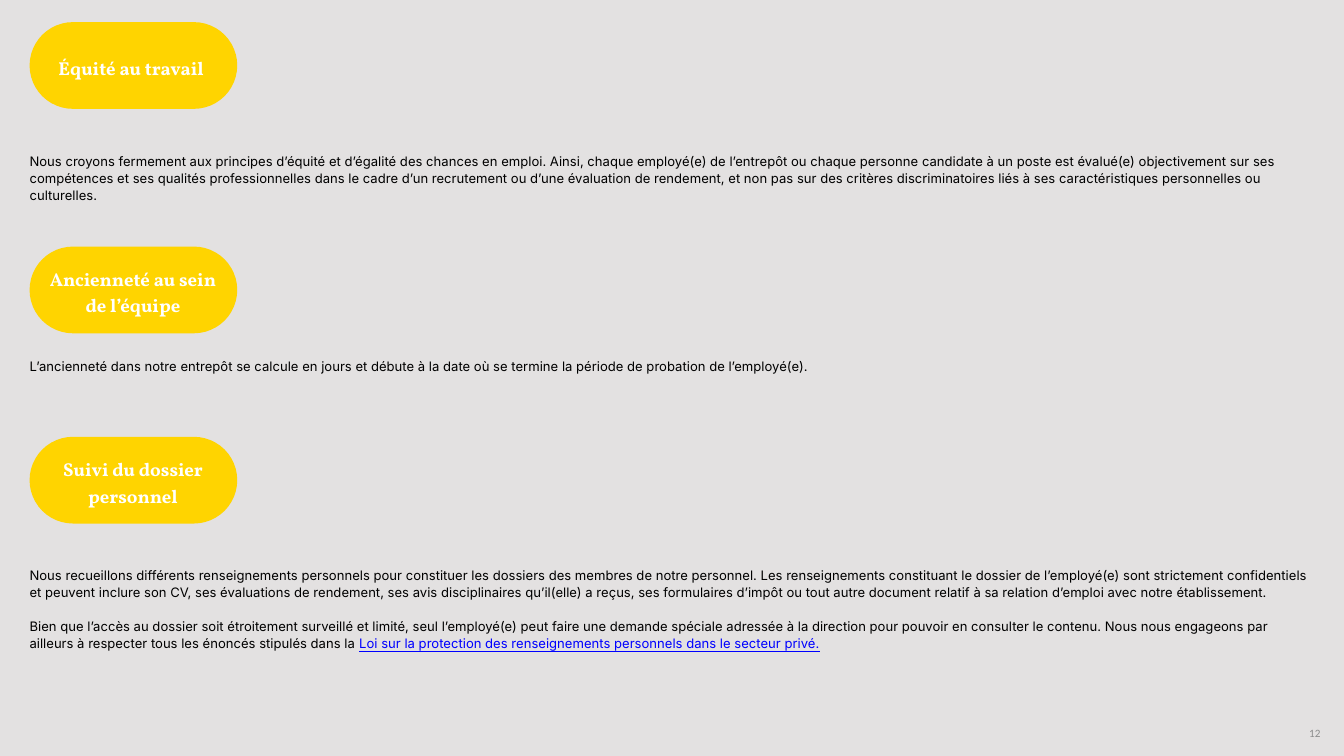
import pptx
import pptx.util
import pptx.dml.color
import pptx.enum.shapes
import pptx.enum.text

Pt = pptx.util.Pt
RGBColor = pptx.dml.color.RGBColor
Align = pptx.enum.text.PP_ALIGN
Anchor = pptx.enum.text.MSO_ANCHOR

BACKGROUND = RGBColor(0xE3, 0xE1, 0xE1)
YELLOW = RGBColor(0xFF, 0xD4, 0x00)
WHITE = RGBColor(0xFF, 0xFF, 0xFF)
BLACK = RGBColor(0x00, 0x00, 0x00)
BLUE = RGBColor(0x00, 0x00, 0xFF)
GREY = RGBColor(0x8C, 0x8C, 0x8C)

WIDTH = pptx.util.Inches(20)
HEIGHT = pptx.util.Inches(11.25)
COLUMN = WIDTH / 100
ROW = HEIGHT / 100

MARGIN = 2.2
BODY_COLUMNS = 95.65
PILL_COLUMNS, PILL_ROWS = 15.45, 11.47
BODY_LEADING = 18.2
TITLE_LEADING = 28

LAW = "Loi sur la protection des renseignements personnels dans le secteur privé."

SECTIONS = [
    (2.93, 17.16, 6.67, "Équité au travail", (2.15, 4.09, 11.2, 3.2), Align.LEFT, [
        ["Nous croyons fermement aux principes d’équité et d’égalité des chances en emploi. "
         "Ainsi, chaque employé(e) de l’entrepôt ou chaque personne candidate à un poste est "
         "évalué(e) objectivement sur ses compétences et ses qualités professionnelles dans le "
         "cadre d’un recrutement ou d’une évaluation de rendement, et non pas sur des critères "
         "discriminatoires liés à ses caractéristiques personnelles ou culturelles."],
    ]),
    (32.62, 14.58, 2.13, "Ancienneté au sein de l’équipe", (1.2, 2.35, 13, 6.67), Align.CENTER, [
        ["L’ancienneté dans notre entrepôt se calcule en jours et débute à la date où se "
         "termine la période de probation de l’employé(e)."],
    ]),
    (57.78, 17.16, 11.11, "Suivi du dossier personnel", (1.2, 2.35, 13, 6.67), Align.CENTER, [
        ["Nous recueillons différents renseignements personnels pour constituer les dossiers "
         "des membres de notre personnel. Les renseignements constituant le dossier de "
         "l’employé(e) sont strictement confidentiels et peuvent inclure son CV, ses "
         "évaluations de rendement, ses avis disciplinaires qu’il(elle) a reçus, ses "
         "formulaires d’impôt ou tout autre document relatif à sa relation d’emploi avec "
         "notre établissement."],
        ["Bien que l’accès au dossier soit étroitement surveillé et limité, seul l’employé(e) "
         "peut faire une demande spéciale adressée à la direction pour pouvoir en consulter le "
         "contenu. Nous nous engageons par ailleurs à respecter tous les énoncés stipulés dans la ",
         LAW],
    ]),
]


def place(left, top, columns, rows):
    return (round(left * COLUMN), round(top * ROW),
            round(columns * COLUMN), round(rows * ROW))


def set_font(font, name, size, color, bold=False):
    font.name = name
    font.size = Pt(size)
    font.bold = bold
    font.color.rgb = color


def add_text_frame(page, box):
    frame = page.shapes.add_textbox(*place(*box)).text_frame
    frame.word_wrap = True
    frame.margin_left = frame.margin_top = frame.margin_right = frame.margin_bottom = 0
    return frame


def add_pill(page, box, title, title_box, align):
    pill = page.shapes.add_shape(
        pptx.enum.shapes.MSO_SHAPE.ROUNDED_RECTANGLE, *place(*box))
    pill.adjustments[0] = 0.5
    pill.shadow.inherit = False
    pill.fill.solid()
    pill.fill.fore_color.rgb = YELLOW
    pill.line.fill.background()

    left, top = box[:2]
    inset_left, inset_top, columns, rows = title_box
    frame = add_text_frame(page, (left + inset_left, top + inset_top, columns, rows))
    para = frame.paragraphs[0]
    para.text = title
    para.alignment = align
    para.line_spacing = Pt(TITLE_LEADING)
    set_font(para.font, "Vollkorn", 20, WHITE, bold=True)


def add_body(page, box, paragraphs):
    frame = add_text_frame(page, box)
    for index, parts in enumerate(paragraphs):
        para = frame.add_paragraph() if index else frame.paragraphs[0]
        para.line_spacing = Pt(BODY_LEADING)
        if index:
            para.space_before = Pt(BODY_LEADING)
        for part in parts:
            span = para.add_run()
            span.text = part
            set_font(span.font, "Inter", 14, BLUE if part == LAW else BLACK)
            if part == LAW:
                span.font.underline = True


def add_page_number(page, box, number):
    frame = page.shapes.add_textbox(*place(*box)).text_frame
    frame.word_wrap = True
    frame.vertical_anchor = Anchor.MIDDLE
    para = frame.paragraphs[0]
    para.text = number
    para.alignment = Align.RIGHT
    set_font(para.font, "Calibri", 12, GREY)


def main():
    deck = pptx.Presentation()
    deck.slide_width, deck.slide_height = WIDTH, HEIGHT
    page = deck.slides.add_slide(deck.slide_layouts[6])
    page.background.fill.solid()
    page.background.fill.fore_color.rgb = BACKGROUND

    for top, body_offset, body_rows, title, title_box, align, paragraphs in SECTIONS:
        add_pill(page, (MARGIN, top, PILL_COLUMNS, PILL_ROWS), title, title_box, align)
        add_body(page, (MARGIN, top + body_offset, BODY_COLUMNS, body_rows), paragraphs)
    add_page_number(page, (87.1, 95.2, 11.65, 3.56), "12")

    deck.save("out.pptx")


if __name__ == "__main__":
    main()
